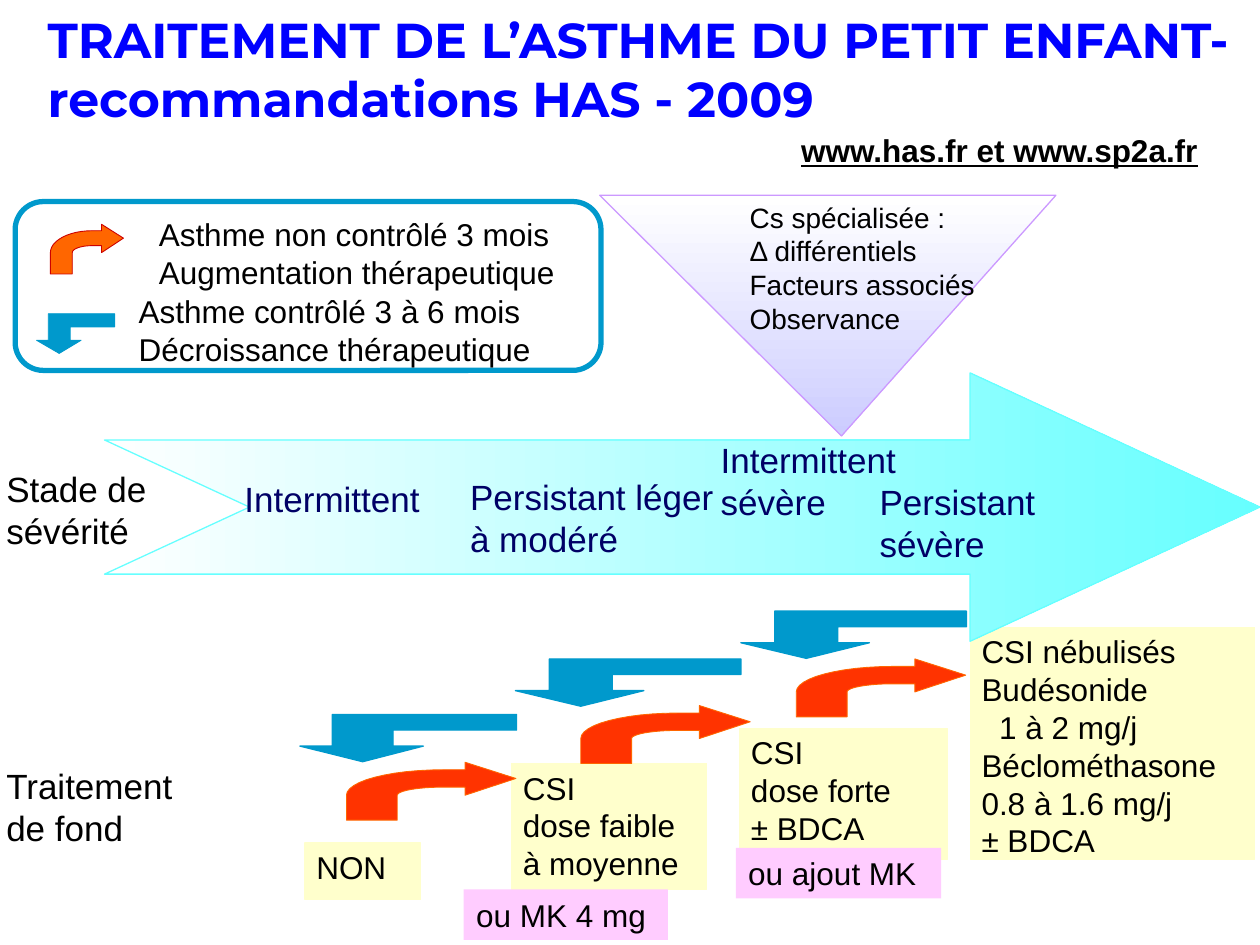
from math import cos, pi, sin
from pptx import Presentation
from pptx.dml.color import RGBColor
from pptx.enum.shapes import MSO_SHAPE
from pptx.enum.text import MSO_ANCHOR, MSO_AUTO_SIZE, PP_ALIGN
from pptx.util import Inches, Pt

COLS, ROWS = 100, 75
NAVY, BLUE, RED = "000066", "0099CC", "FF3300"
CREAM, PINK = "FFFFCC", "FFCCFF"


def color(code):
    return RGBColor.from_string(code)


def arc(rx, ry, back=False):
    turns = [pi / 2 * i / 12 for i in range(13)]
    dots = [(0.57 - rx * sin(t), 0.57 - ry * cos(t)) for t in turns]
    return dots[::-1] if back else dots


FUNNEL = [(0, 0), (1, 0), (0.53, 1)]
HOOK = [(0.29, 1), (0.57, 0.67), (0.43, 0.67), (0.43, 0.33), (1, 0.33),
        (1, 0), (0.15, 0), (0.15, 0.67), (0, 0.67)]
BEND = [(1, 0.28), (0.7, 0), (0.7, 0.13), *arc(0.57, 0.44), (0, 1),
        (0.3, 1), *arc(0.27, 0.14, True), (0.7, 0.43), (0.7, 0.57)]


class Board:
    def __init__(self, deck):
        self.font = "Arial"
        self.ink = "000000"
        self.slide = deck.slides.add_slide(deck.slide_layouts[6])
        self.shapes = self.slide.shapes
        self.col = deck.slide_width / COLS
        self.row = deck.slide_height / ROWS

    def area(self, x, y, w, h):
        return [round(v) for v in
                (x * self.col, y * self.row, w * self.col, h * self.row)]

    def paint(self, shape, fill, line=None, width=0.75, angle=None):
        shape.shadow.inherit = False
        if angle is None:
            shape.fill.solid()
            shape.fill.fore_color.rgb = color(fill)
        else:
            shape.fill.gradient()
            shape.fill.gradient_angle = angle
            for stop, code in zip(shape.fill.gradient_stops, ("FFFFFF", fill)):
                stop.color.rgb = color(code)
        if line:
            shape.line.color.rgb = color(line)
            shape.line.width = Pt(width)
        else:
            shape.line.fill.background()
        return shape

    def label(self, shape, lines, size, ink=None, font=None, bold=False,
              under=False, wrap=True, pad=(0.09, 0.04), anchor=MSO_ANCHOR.TOP):
        frame = shape.text_frame
        frame.word_wrap = wrap
        if not wrap:
            frame.auto_size = MSO_AUTO_SIZE.SHAPE_TO_FIT_TEXT
        frame.vertical_anchor = anchor
        frame.margin_left = frame.margin_right = Inches(pad[0])
        frame.margin_top = frame.margin_bottom = Inches(pad[1])
        for i, line in enumerate(lines):
            para = frame.paragraphs[0] if i == 0 else frame.add_paragraph()
            para.alignment = PP_ALIGN.LEFT
            run = para.add_run()
            run.text = line
            run.font.name = font or self.font
            run.font.size = Pt(size)
            run.font.bold = bold
            run.font.underline = under
            run.font.color.rgb = color(ink or self.ink)
        return frame

    def text(self, box, lines, size, **style):
        return self.label(self.shapes.add_textbox(*self.area(*box)),
                          lines, size, **style)

    def shape(self, kind, box, fill, line=None, **style):
        item = self.shapes.add_shape(kind, *self.area(*box))
        return self.paint(item, fill, line, **style)

    def card(self, box, lines, fill, line=None, **style):
        item = self.shape(MSO_SHAPE.RECTANGLE, box, fill, line)
        return self.label(item, lines, 18, **style)

    def outline(self, dots, box, fill, line, **style):
        x, y, w, h = self.area(*box)
        spots = [(round(x + w * a), round(y + h * b)) for a, b in dots]
        pen = self.shapes.build_freeform(*spots[0])
        pen.add_line_segments(spots[1:], close=True)
        return self.paint(pen.convert_to_shape(), fill, line, **style)


def main():
    deck = Presentation()
    deck.slide_width, deck.slide_height = Inches(10), Inches(7.5)
    board = Board(deck)
    free = dict(wrap=False, pad=(0.1, 0.05))

    board.text((-0.4, 36.7, 14.6, 2.8), ["Stade de sévérité"], 20)
    board.text((-0.4, 60.3, 16.4, 2.8), ["Traitement de fond"], 20)

    board.card((24.2, 66.9, 9.2, 4.5), ["NON"], CREAM, CREAM)
    board.card((40.6, 60.6, 15.5, 10), ["CSI", "dose faible à moyenne"],
               CREAM, CREAM)
    board.card((58.7, 57.8, 16.5, 10.4), ["CSI", "dose forte", "± BDCA"],
               CREAM, CREAM)
    frame = board.card(
        (77, 49.8, 22.6, 18.4),
        ["CSI nébulisés", "Budésonide", "1 à 2 mg/j",
         "Béclométhasone 0.8 à 1.6 mg/j", "± BDCA"], CREAM, CREAM)
    dose = frame.paragraphs[2]._p.get_or_add_pPr()
    dose.set("marL", str(Inches(0.14)))

    board.outline(FUNNEL, (47.6, 15.5, 36.2, 19.1), "CCCCFF", "CC99FF",
                  angle=270)
    board.text((58.6, 15.5, 26.8, 6.4),
               ["Cs spécialisée :", "Δ différentiels", "Facteurs associés",
                "Observance"], 16)

    for x, y, w in ((23.8, 56.7, 17.2), (40.9, 52.3, 17.9), (58.8, 48.5, 17.9)):
        board.outline(HOOK, (x, y, w, 3.75), BLUE, BLUE)
    for x, y in ((27.5, 60.5), (46.1, 56), (63.2, 52.3)):
        board.outline(BEND, (x, y, 13.45, 4.6), RED, "FF6600", width=0.5)

    board.text((2.8, -1.1, 99.2, 13.1),
               ["TRAITEMENT DE L’ASTHME DU PETIT ENFANT- "
                "recommandations HAS - 2009"], 28, ink="0000FF",
               font="Montserrat", bold=True, pad=(0.1, 0.05),
               anchor=MSO_ANCHOR.MIDDLE)
    board.text((62.6, 9.9, 33.7, 4), ["www.has.fr et www.sp2a.fr"], 18,
               bold=True, under=True, **free)

    scale = board.shape(MSO_SHAPE.NOTCHED_RIGHT_ARROW, (8.3, 29.6, 91.7, 21.3),
                        "66FFFF", "66FFFF", angle=0)
    scale.adjustments[0] = 0.5
    scale.adjustments[1] = 1.08
    for x, y, w, stage in ((18.5, 37.5, 18.1, "Intermittent"),
                           (36.4, 37.3, 23.1, "Persistant léger à modéré"),
                           (68.9, 37.7, 21.8, "Persistant sévère"),
                           (56.3, 34.4, 19.7, "Intermittent sévère")):
        board.text((x, y, w, 2.8), [stage], 20, ink=NAVY)

    board.shape(MSO_SHAPE.FLOWCHART_ALTERNATE_PROCESS, (1.2, 16, 46.5, 13.4),
                "FFFFFF", BLUE, width=3)
    board.outline(HOOK, (2.9, 24.9, 6.2, 3.15), BLUE, BLUE, width=0.5)
    board.outline(BEND, (4, 17.8, 5.8, 3.95), "FF6600", "CC0000", width=0.5)
    board.text((10.1, 22.8, 39, 5.8),
               ["Asthme contrôlé 3 à 6 mois", "Décroissance thérapeutique"], 18)
    board.text((11.7, 16.7, 43.8, 4.4),
               ["Asthme non contrôlé 3 mois", "Augmentation thérapeutique"], 18)

    board.card((36.8, 70.6, 16.2, 4), ["ou MK 4 mg"], PINK, **free)
    board.card((58.4, 67.3, 16.3, 4), ["ou ajout MK"], PINK, **free)
    deck.save("out.pptx")


if __name__ == "__main__":
    main()
